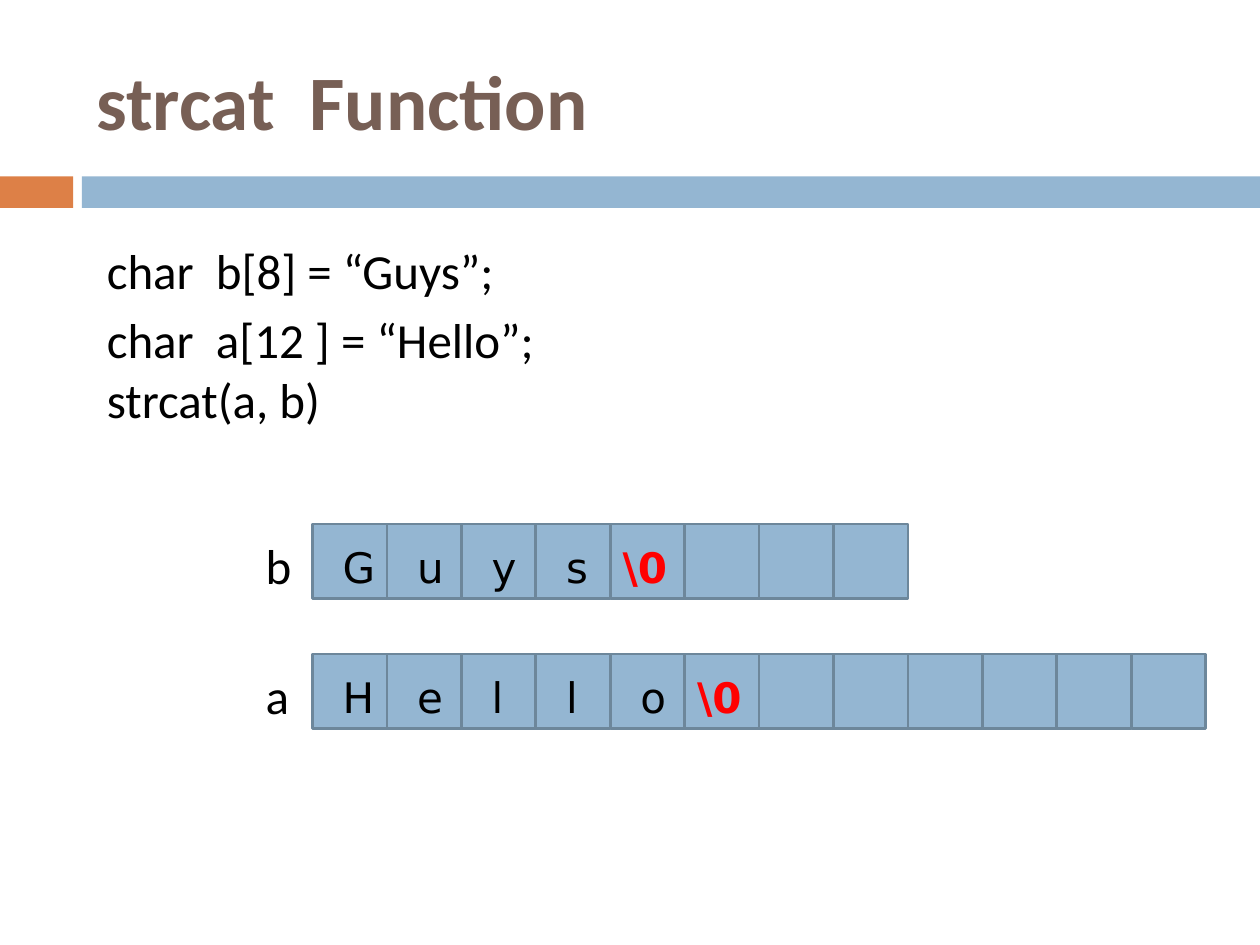
from pptx import Presentation
from pptx.dml.color import RGBColor
from pptx.enum.shapes import MSO_SHAPE as Shape
from pptx.enum.text import MSO_ANCHOR as Anchor
from pptx.util import Pt

COLORS = {"orange": "DD8047", "blue": "94B6D2", "edge": "6D879B",
          "title": "775F55", "text": "000000", "null": "FF0000"}
TITLE = "strcat  Function"
BARS = [(0, 41.8, "orange"), (46.8, 673.2, "blue")]  # left, width, fill
CODE = [  # text, top
    ("char  b[8] = “Guys”;", 133.9),
    ("char  a[12 ] = “Hello”;", 173.5),
    ("strcat(a, b)", 207.4),
]
ARRAYS = [  # name, characters, size, top
    ("b", ["G", "u", "y", "s", "\\0"], 8, 299.5),
    ("a", ["H", "e", "l", "l", "o", "\\0"], 12, 373.7),
]
CELL = 42.53
CELLS_LEFT = 178.6
LETTER = {"size": Pt(24), "name": "DejaVu Sans", "bold": False}
NULL = {**LETTER, "bold": True}
BODY = {"size": Pt(28), "name": "Calibri", "bold": False}
HEADING = {"size": Pt(44), "name": "Calibri", "bold": True}


def add_rect(s, left, top, width, height, fill, line=None):
    sp = s.shapes.add_shape(Shape.RECTANGLE, Pt(left), Pt(top), Pt(width), Pt(height))
    sp.shadow.inherit = False
    sp.fill.solid()
    sp.fill.fore_color.rgb = RGBColor.from_string(COLORS[fill])
    if line:
        sp.line.color.rgb = RGBColor.from_string(COLORS[line])
        sp.line.width = Pt(1.5)
    else:
        sp.line.fill.background()


def add_text(s, text, left, top, width, height, font, color="text", anchor=Anchor.TOP):
    tf = s.shapes.add_textbox(Pt(left), Pt(top), Pt(width), Pt(height)).text_frame
    tf.word_wrap = True
    tf.vertical_anchor = anchor
    r = tf.paragraphs[0].add_run()
    r.text = text
    for key, value in font.items():
        setattr(r.font, key, value)
    r.font.color.rgb = RGBColor.from_string(COLORS[color])


def add_array(s, name, chars, size, top):
    for i in range(size):
        add_rect(s, CELLS_LEFT + i * CELL, top, CELL, CELL, "blue", "edge")
    add_text(s, name, 144.7, top + 2.9, 39.6, 41, BODY)
    for i, char in enumerate(chars):
        left = CELLS_LEFT + i * CELL
        if char == "\\0":
            add_text(s, char, left, top + 6.5, 47.5, 36, NULL, "null")
        else:
            add_text(s, char, left + 10.2, top + 6.5, 33, 36, LETTER)


def main():
    prs = Presentation()
    prs.slide_width, prs.slide_height = Pt(720), Pt(540)
    s = prs.slides.add_slide(prs.slide_layouts[6])
    for left, width, fill in BARS:
        add_rect(s, left, 100.8, width, 18, fill)
    add_text(s, TITLE, 48, 18, 642, 78, HEADING, "title", Anchor.MIDDLE)
    for text, top in CODE:
        add_text(s, text, 54, top, 283.7, 41, BODY)
    for array in ARRAYS:
        add_array(s, *array)
    prs.save("out.pptx")


if __name__ == "__main__":
    main()
